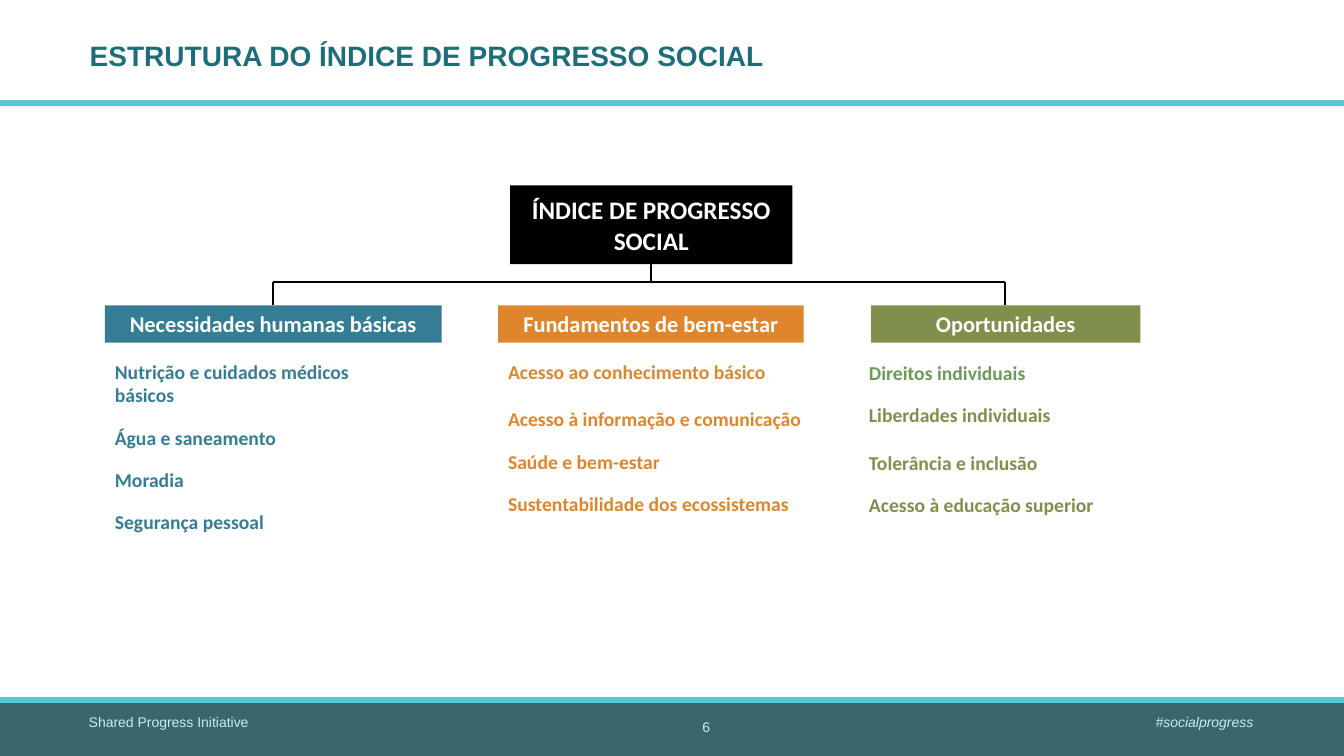
"""Build the slide that shows the structure of the social progress index."""
from dataclasses import dataclass

from lxml import etree
from pptx import Presentation
from pptx.dml.color import RGBColor
from pptx.enum.shapes import MSO_CONNECTOR, MSO_SHAPE
from pptx.enum.text import MSO_ANCHOR as Anchor, PP_ALIGN as Align
from pptx.oxml.ns import qn
from pptx.util import Inches, Pt


@dataclass(frozen=True)
class Theme:
    heading_font: str = "Arial"
    body_font: str = "Calibri"
    title: str = "1E6E79"
    accent: str = "58C6D6"
    footer: str = "3A676E"
    footer_text: str = "C5EBF1"
    teal: str = "347D94"
    orange: str = "DF862D"
    olive: str = "818F4D"
    green: str = "6D9A54"
    black: str = "000000"
    white: str = "FFFFFF"
    title_size: int = 20
    root_size: int = 18
    pillar_size: int = 16
    item_size: int = 14
    footer_size: int = 10
    narrow_gap: float = 13.4
    wide_gap: float = 17.1


theme = Theme()
deck = Presentation()
deck.slide_width, deck.slide_height = Inches(13.33), Inches(7.5)
page = deck.slides.add_slide(deck.slide_layouts[6])


def add_text(lines, place, size, color, font=theme.body_font, bold=True, italic=False,
             align=Align.LEFT, anchor=Anchor.TOP, insets=(0.1, 0.05, 0.1, 0.05),
             fill=None, border=None):
    """Add a text box, or a filled rectangle; each line is (text, gap before, colour)."""
    left, top, width, height = map(Inches, place)
    if fill:
        box = page.shapes.add_shape(MSO_SHAPE.RECTANGLE, left, top, width, height)
        box.shadow.inherit = False
        box.fill.solid()
        box.fill.fore_color.rgb = RGBColor.from_string(fill)
        if border:
            box.line.color.rgb = RGBColor.from_string(border)
            box.line.width = Pt(0.75)
        else:
            box.line.fill.background()
    else:
        box = page.shapes.add_textbox(left, top, width, height)
    frame = box.text_frame
    frame.word_wrap = True
    frame.vertical_anchor = anchor
    frame.margin_left, frame.margin_top, frame.margin_right, frame.margin_bottom = map(Inches, insets)
    if isinstance(lines, str):
        lines = [(lines, 0, color)] if lines else []
    for index, (text, gap, tint) in enumerate(lines):
        para = frame.add_paragraph() if index else frame.paragraphs[0]
        para.alignment = align
        para.space_before = Pt(gap)
        span = para.add_run()
        span.text = text
        span.font.name, span.font.size = font, Pt(size)
        span.font.bold, span.font.italic = bold, italic
        span.font.color.rgb = RGBColor.from_string(tint or color)


bands = [
    ((0, 6.96, 13.33, 0.54), theme.footer, None),
    ((0, 1, 13.33, 0.05), theme.accent, theme.accent),
    ((0, 6.92, 13.33, 0.05), theme.accent, theme.accent),
]
for place, fill, border in bands:
    add_text("", place, theme.footer_size, fill, fill=fill, border=border)

add_text("ESTRUTURA DO ÍNDICE DE PROGRESSO SOCIAL", (0.88, 0.17, 11.56, 0.8),
         theme.title_size, theme.title, font=theme.heading_font,
         anchor=Anchor.MIDDLE, insets=(0.01, 0, 0.1, 0.05))

footers = [
    ("Shared Progress Initiative", (0.88, 7.08, 4.11, 0.4), Align.LEFT, False, 0),
    ("6", (6.67, 7.08, 0.67, 0.42), Align.CENTER, False, 0.05),
    ("#socialprogress", (8.32, 7.08, 4.11, 0.4), Align.RIGHT, True, 0),
]
for text, place, align, italic, inset in footers:
    add_text(text, place, theme.footer_size, theme.footer_text, font=theme.heading_font,
             bold=False, italic=italic, align=align, insets=(0, inset, 0, inset))

pillar_top, branch_y = 3.03, 2.8
root_x, left_x, right_x = 6.46, 2.71, 9.97
branches = [
    (root_x, 2.43, root_x, branch_y),
    (left_x, branch_y, right_x, branch_y),
    (left_x, branch_y, left_x, pillar_top),
    (right_x, branch_y, right_x, pillar_top),
]
for ends in branches:
    branch = page.shapes.add_connector(MSO_CONNECTOR.STRAIGHT, *map(Inches, ends))
    branch.line.color.rgb = RGBColor.from_string(theme.black)
    branch.line.width = Pt(1.5)
    etree.SubElement(branch._element.spPr, qn("a:effectLst"))

add_text("ÍNDICE DE PROGRESSO SOCIAL", (5.06, 1.84, 2.8, 0.78), theme.root_size,
         theme.white, align=Align.CENTER, anchor=Anchor.MIDDLE, fill=theme.black)

narrow, wide = theme.narrow_gap, theme.wide_gap
pillars = [
    ("Necessidades humanas básicas", 1.04, 3.34, theme.teal, (1.04, 3.52, 2.99, 1.88), [
        ("Nutrição e cuidados médicos básicos", 0, None),
        ("Água e saneamento", narrow, None),
        ("Moradia", narrow, None),
        ("Segurança pessoal", narrow, None),
    ]),
    ("Fundamentos de bem-estar", 4.94, 3.03, theme.orange, (4.94, 3.52, 3.39, 1.65), [
        ("Acesso ao conhecimento básico", 0, None),
        ("Acesso à informação e comunicação", wide, None),
        ("Saúde e bem-estar", narrow, None),
        ("Sustentabilidade dos ecossistemas", narrow, None),
    ]),
    ("Oportunidades", 8.64, 2.67, theme.olive, (8.52, 3.53, 3.39, 1.65), [
        ("Direitos individuais", 0, theme.green),
        ("Liberdades individuais", narrow, None),
        ("Tolerância e inclusão", wide, None),
        ("Acesso à educação superior", narrow, None),
    ]),
]
for name, left, width, color, items_place, items in pillars:
    add_text(name, (left, pillar_top, width, 0.37), theme.pillar_size, theme.white,
             align=Align.CENTER, fill=color)
    add_text(items, items_place, theme.item_size, color)

deck.save("out.pptx")
